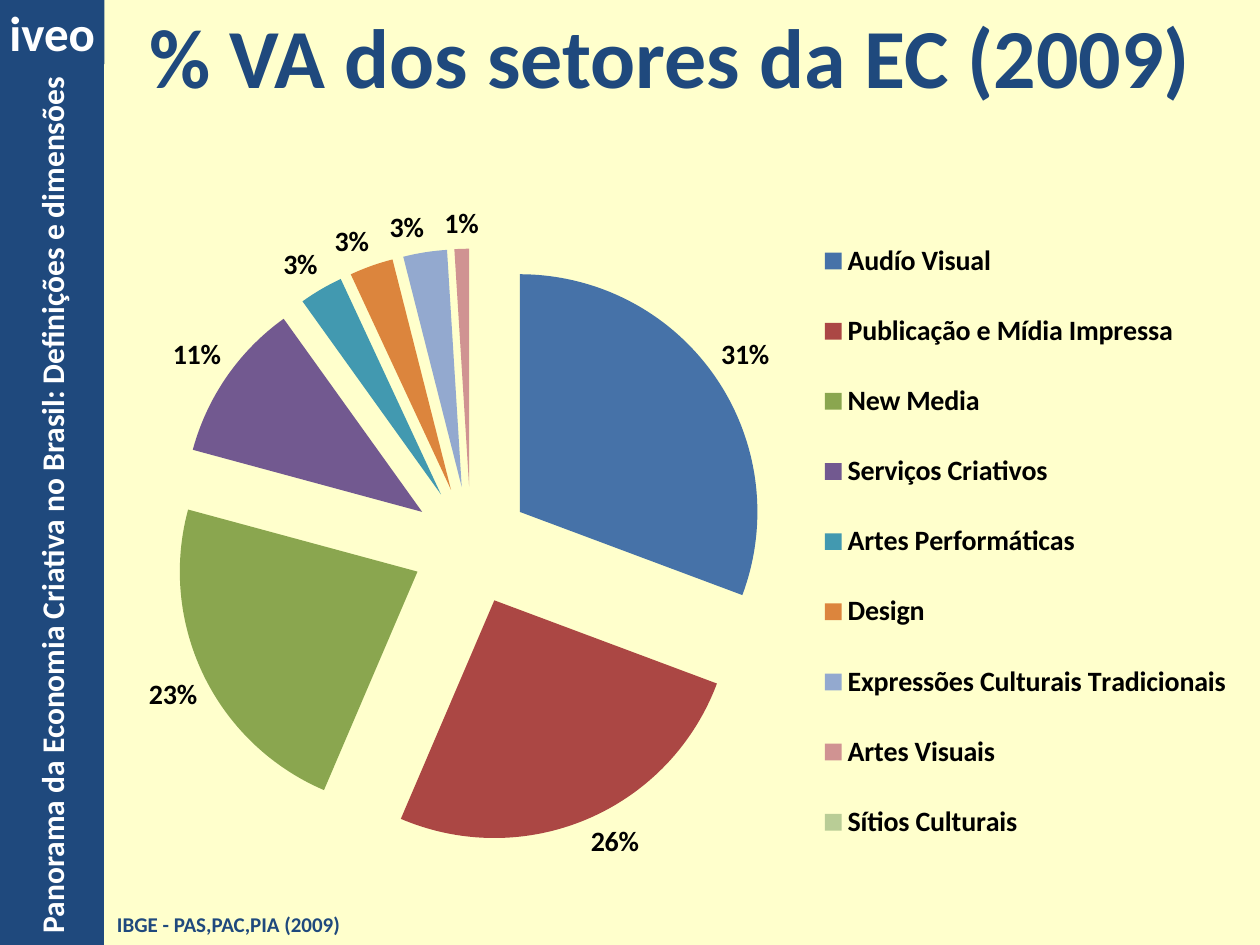
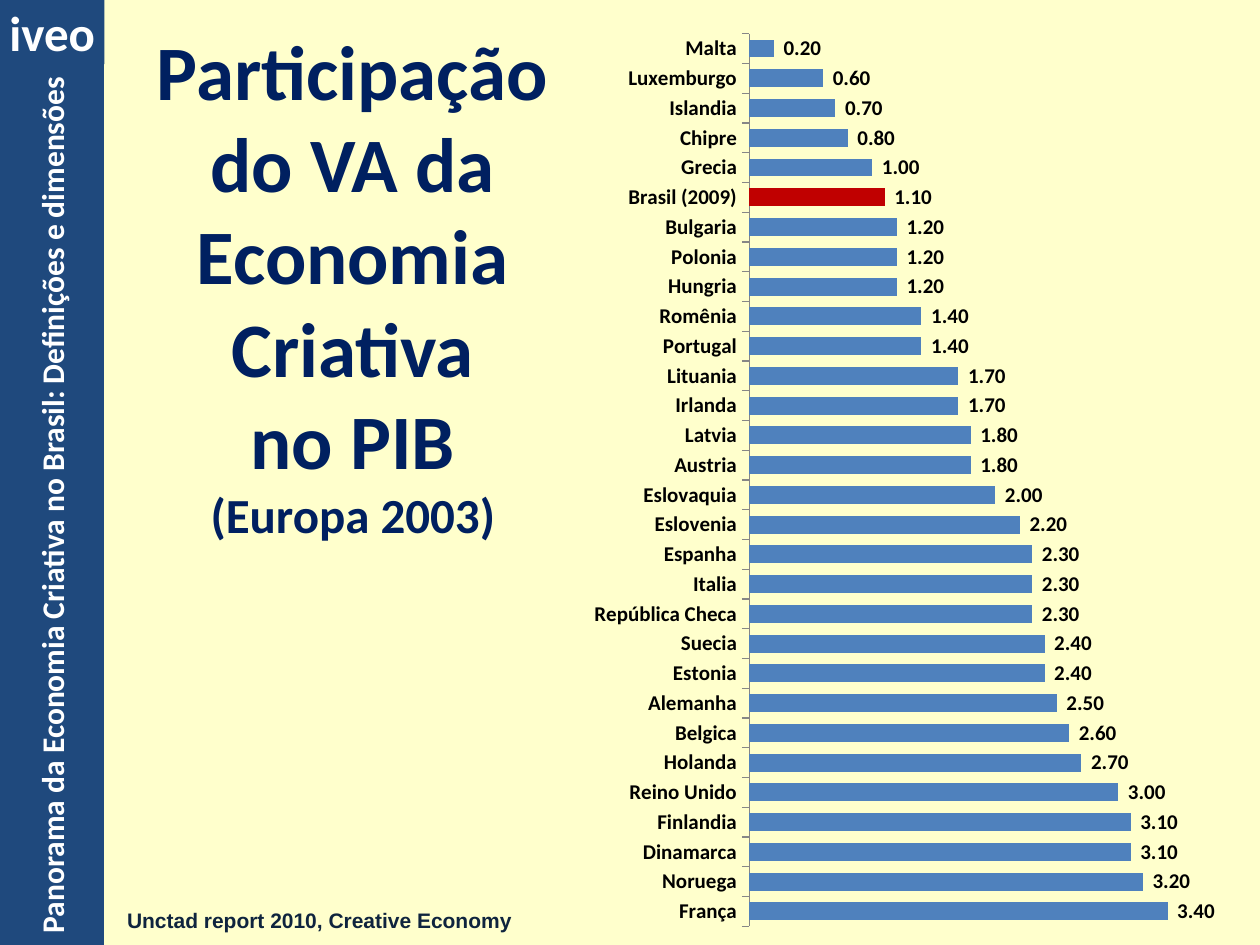
from lxml.etree import SubElement
from pptx import Presentation
from pptx.chart.data import CategoryChartData
from pptx.dml.color import RGBColor
from pptx.enum.chart import XL_CHART_TYPE as ChartType
from pptx.enum.chart import XL_LABEL_POSITION as LabelPosition
from pptx.enum.chart import XL_LEGEND_POSITION as LegendPosition
from pptx.enum.chart import XL_TICK_MARK as TickMark
from pptx.enum.shapes import MSO_SHAPE as Shape
from pptx.enum.text import MSO_ANCHOR as Anchor
from pptx.enum.text import PP_ALIGN as Align
from pptx.oxml.ns import qn
from pptx.util import Inches, Pt

CREAM = RGBColor(0xFF, 0xFF, 0xCC)
BAND_BLUE = RGBColor(0x1F, 0x49, 0x7D)
NAVY = RGBColor(0x00, 0x20, 0x60)
INK = RGBColor(0x0F, 0x24, 0x3E)
WHITE = RGBColor(0xFF, 0xFF, 0xFF)
BLACK = RGBColor(0x00, 0x00, 0x00)
BAR_BLUE = RGBColor(0x4F, 0x81, 0xBD)
BRAZIL_RED = RGBColor(0xC0, 0x00, 0x00)
AXIS_GREY = RGBColor(0x86, 0x86, 0x86)

SECTORS = [
    ("Audío Visual", 31, RGBColor(0x46, 0x72, 0xA8)),
    ("Publicação e Mídia Impressa", 26, RGBColor(0xAB, 0x47, 0x44)),
    ("New Media", 23, RGBColor(0x8A, 0xA6, 0x4F)),
    ("Serviços Criativos", 11, RGBColor(0x72, 0x59, 0x90)),
    ("Artes Performáticas", 3, RGBColor(0x42, 0x99, 0xB0)),
    ("Design", 3, RGBColor(0xDC, 0x85, 0x3D)),
    ("Expressões Culturais Tradicionais", 3, RGBColor(0x93, 0xA9, 0xCF)),
    ("Artes Visuais", 1, RGBColor(0xD0, 0x93, 0x92)),
    ("Sítios Culturais", 0, RGBColor(0xB9, 0xCD, 0x96)),
]

BRAZIL = "Brasil (2009)"
GDP_SHARES = {
    "França": 3.4, "Noruega": 3.2, "Dinamarca": 3.1, "Finlandia": 3.1,
    "Reino Unido": 3.0, "Holanda": 2.7, "Belgica": 2.6, "Alemanha": 2.5,
    "Estonia": 2.4, "Suecia": 2.4, "República Checa": 2.3, "Italia": 2.3,
    "Espanha": 2.3, "Eslovenia": 2.2, "Eslovaquia": 2.0, "Austria": 1.8,
    "Latvia": 1.8, "Irlanda": 1.7, "Lituania": 1.7, "Portugal": 1.4,
    "Romênia": 1.4, "Hungria": 1.2, "Polonia": 1.2, "Bulgaria": 1.2,
    BRAZIL: 1.1, "Grecia": 1.0, "Chipre": 0.8, "Islandia": 0.7,
    "Luxemburgo": 0.6, "Malta": 0.2,
}


def inches(box):
    return [Inches(length) for length in box]


def paint(fill, color):
    fill.solid()
    fill.fore_color.rgb = color


def style_font(font, size, color, name="Calibri"):
    font.name = name
    font.size = Pt(size)
    font.bold = True
    font.color.rgb = color


def write(holder, lines, color, align=Align.LEFT, name="Calibri", wrap=True):
    frame = holder.text_frame
    frame.word_wrap = wrap
    frame.vertical_anchor = Anchor.MIDDLE
    frame.text = "\n".join(text for text, _ in lines)
    for paragraph, (_, size) in zip(frame.paragraphs, lines):
        paragraph.alignment = align
        style_font(paragraph.font, size, color, name)


def add_text(slide, box, lines, color, **style):
    write(slide.shapes.add_textbox(*inches(box)), lines, color, **style)


def add_band(slide, box, text, size, rotation=0, **style):
    band = slide.shapes.add_shape(Shape.RECTANGLE, *inches(box))
    band.rotation = rotation
    band.shadow.inherit = False
    paint(band.fill, BAND_BLUE)
    band.line.fill.background()
    write(band, [(text, size)], WHITE, **style)


def add_branded_slide(deck):
    slide = deck.slides.add_slide(deck.slide_layouts[6])
    paint(slide.background.fill, CREAM)
    add_band(slide, (-3.34, 3.34, 7.5, 0.83),
             "Panorama da Economia Criativa no Brasil: Definições e dimensões", 18, 270)
    add_band(slide, (0, 0, 0.83, 0.51), "iveo", 28, align=Align.CENTER, wrap=False)
    return slide


def fill_layout(layout, x, y, w, h, inner=False):
    manual = SubElement(layout, qn("c:manualLayout"))
    settings = [("layoutTarget", "inner")] if inner else []
    settings += [("xMode", "edge"), ("yMode", "edge"),
                 ("x", x), ("y", y), ("w", w), ("h", h)]
    for tag, value in settings:
        SubElement(manual, qn(f"c:{tag}")).set("val", str(value))


def place_plot(chart, *area):
    plot_area = chart._chartSpace.find(".//" + qn("c:plotArea"))
    for automatic in plot_area.findall(qn("c:layout")):
        plot_area.remove(automatic)
    layout = SubElement(plot_area, qn("c:layout"))
    plot_area.insert(0, layout)
    fill_layout(layout, *area, inner=True)


def place_legend(chart, *area):
    chart.has_legend = True
    legend = chart.legend
    legend.position = LegendPosition.RIGHT
    legend.include_in_layout = False
    layout = SubElement(legend._element, qn("c:layout"))
    legend._element.get_or_add_legendPos().addnext(layout)
    fill_layout(layout, *area)


def add_chart(slide, kind, box, categories, values, size, label_format):
    data = CategoryChartData()
    data.categories = categories
    data.add_series("Series 1", values)
    chart = slide.shapes.add_chart(kind, *inches(box), data).chart
    chart.has_title = False
    chart.has_legend = False
    style_font(chart.font, size, BLACK)
    plot = chart.plots[0]
    plot.has_data_labels = True
    labels = plot.data_labels
    labels.position = LabelPosition.OUTSIDE_END
    labels.number_format = label_format
    labels.number_format_is_linked = False
    return chart, plot, labels


def explode(series, percent):
    explosion = SubElement(series._element, qn("c:explosion"))
    explosion.set("val", str(percent))
    series._element.find(qn("c:tx")).addnext(explosion)


def hide_label(labels, index):
    label = SubElement(labels._element, qn("c:dLbl"))
    SubElement(label, qn("c:idx")).set("val", str(index))
    SubElement(label, qn("c:delete")).set("val", "1")
    labels._element.insert(0, label)


def add_sector_pie(slide):
    names, shares, colors = zip(*SECTORS)
    chart, plot, labels = add_chart(slide, ChartType.PIE, (0.91, 1.07, 8.98, 6.46),
                                    names, shares, 16, "0%")
    plot.vary_by_categories = True
    labels.show_value = False
    labels.show_percentage = True
    hide_label(labels, shares.index(0))
    sectors = plot.series[0]
    explode(sectors, 25)
    for index, color in enumerate(colors):
        paint(sectors.points[index].format.fill, color)
    place_plot(chart, 0.05, 0.14, 0.53, 0.73)
    place_legend(chart, 0.62, 0.09, 0.37, 0.82)


def add_country_bars(slide):
    chart, plot, labels = add_chart(slide, ChartType.BAR_CLUSTERED, (4.61, 0.12, 5.35, 7.38),
                                    list(GDP_SHARES), list(GDP_SHARES.values()),
                                    12, "_(* #,##0.00_)")
    plot.vary_by_categories = False
    plot.gap_width = 66
    labels.show_value = True
    countries = plot.series[0]
    paint(countries.format.fill, BAR_BLUE)
    paint(countries.points[list(GDP_SHARES).index(BRAZIL)].format.fill, BRAZIL_RED)
    shares = chart.value_axis
    shares.minimum_scale = 0
    shares.maximum_scale = 4
    shares.has_major_gridlines = False
    shares.visible = False
    chart.category_axis.major_tick_mark = TickMark.OUTSIDE
    chart.category_axis.format.line.color.rgb = AXIS_GREY
    place_plot(chart, 0.25, 0.02, 0.73, 0.96)


def main():
    deck = Presentation()
    deck.slide_width = Inches(10)
    deck.slide_height = Inches(7.5)

    sectors = add_branded_slide(deck)
    add_text(sectors, (0.91, -0.11, 8.82, 1.1),
             [("% VA dos setores da EC (2009)", 48)], BAND_BLUE, align=Align.CENTER)
    add_sector_pie(sectors)
    add_text(sectors, (0.83, 7.18, 2.28, 0.31),
             [("IBGE - PAS,PAC,PIA (2009)", 12)], BAND_BLUE)

    europe = add_branded_slide(deck)
    add_text(europe, (0.91, 1.7, 3.78, 1.1),
             [("Participação do VA da Economia Criativa", 44), ("no PIB", 44),
              ("(Europa 2003)", 28)], NAVY, align=Align.CENTER)
    add_country_bars(europe)
    add_text(europe, (0.91, 7.15, 3.28, 0.3),
             [("Unctad report 2010, Creative Economy", 12)], INK, name="Arial")

    deck.save("out.pptx")


if __name__ == "__main__":
    main()
